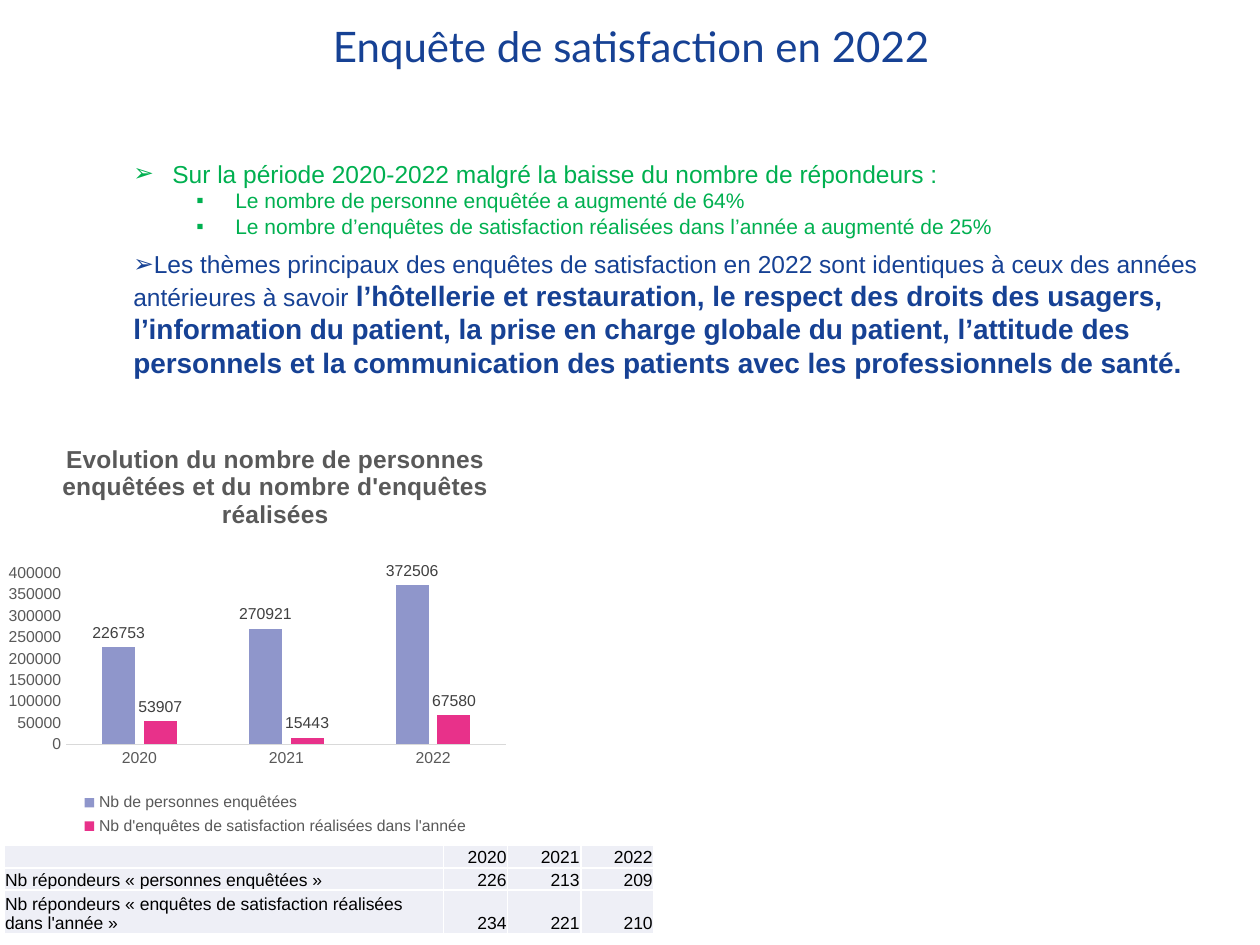
from dataclasses import dataclass

from lxml.etree import SubElement
from pptx import Presentation
from pptx.chart.data import CategoryChartData
from pptx.dml.color import RGBColor
from pptx.enum.chart import XL_CHART_TYPE, XL_LABEL_POSITION, XL_LEGEND_POSITION, XL_TICK_MARK
from pptx.enum.text import MSO_ANCHOR, MSO_AUTO_SIZE, PP_ALIGN
from pptx.oxml import parse_xml
from pptx.oxml.ns import nsdecls, qn
from pptx.util import Inches, Pt


@dataclass(frozen=True)
class Theme:
    """Colours, fonts and type sizes of the slide."""
    blue: str = "164194"
    green: str = "00B050"
    grey: str = "595959"
    label: str = "404040"
    axis: str = "D9D9D9"
    black: str = "000000"
    white: str = "FFFFFF"
    cell: str = "EEEFF6"
    series: tuple = ("8F96CB", "E8318A")
    body_font: str = "Arial"
    title_font: str = "Lato"
    title: int = 24
    strong: int = 16
    body: int = 14
    sub: int = 12
    table: int = 10
    chart: int = 9


T = Theme()
YEARS = ("2020", "2021", "2022")


def rgb(value):
    """Turn a hex string into a colour."""
    return RGBColor.from_string(value)


def style(font, size, color, bold=False, name=T.body_font):
    """Format a font."""
    font.size, font.bold, font.name = Pt(size), bold, name
    font.color.rgb = rgb(color)


def add_text(p, text, size=T.body, color=T.black, bold=False, name=T.body_font, align=None):
    """Add a formatted run to a paragraph."""
    r = p.add_run()
    r.text = text
    style(r.font, size, color, bold, name)
    if align is not None:
        p.alignment = align


def add_bullet(p, char, left):
    """Give a paragraph a hanging bullet."""
    pPr = p._p.get_or_add_pPr()
    pPr.set("marL", str(Inches(left)))
    pPr.set("indent", str(Inches(-0.31)))
    SubElement(pPr, qn("a:buFont"), typeface=T.body_font)
    SubElement(pPr, qn("a:buChar"), char=char)


def add_title(s, x, y, w, h):
    """Place the slide title."""
    tf = s.shapes.add_textbox(Inches(x), Inches(y), Inches(w), Inches(h)).text_frame
    tf.word_wrap = True
    tf.vertical_anchor = MSO_ANCHOR.MIDDLE
    add_text(tf.paragraphs[0], "Enquête de satisfaction en 2022", size=T.title,
             color=T.blue, name=T.title_font, align=PP_ALIGN.CENTER)


def add_findings(s, x, y, w, h):
    """Place the bulleted findings."""
    tf = s.shapes.add_textbox(Inches(x), Inches(y), Inches(w), Inches(h)).text_frame
    tf.word_wrap = True
    tf.auto_size = MSO_AUTO_SIZE.SHAPE_TO_FIT_TEXT
    p = tf.paragraphs[0]
    add_bullet(p, "➢", 0.31)
    add_text(p, "Sur la période 2020-2022 malgré la baisse du nombre de répondeurs :", color=T.green)
    for text in ("Le nombre de personne enquêtée a augmenté de 64%",
                 "Le nombre d’enquêtes de satisfaction réalisées dans l’année a augmenté de 25%"):
        p = tf.add_paragraph()
        p.level = 1
        add_bullet(p, "▪", 0.81)
        add_text(p, text, size=T.sub, color=T.green)
    p = tf.add_paragraph()
    p.space_before = Pt(6)
    add_bullet(p, "➢", 0)
    add_text(p, "Les thèmes principaux des enquêtes de satisfaction en 2022 sont identiques "
             "à ceux des années antérieures à savoir ", color=T.blue)
    add_text(p, "l’hôtellerie et restauration, le respect des droits des usagers, "
             "l’information du patient, la prise en charge globale du patient, l’attitude des "
             "personnels et la communication des patients avec les professionnels de santé.",
             size=T.strong, color=T.blue, bold=True)


def set_plot_layout(chart, x, y, w, h):
    """Fix the inner plot area as fractions of the chart."""
    area = chart._chartSpace.chart.plotArea
    for old in area.findall(qn("c:layout")):
        area.remove(old)
    area.insert(0, parse_xml(
        f'<c:layout {nsdecls("c")}><c:manualLayout><c:layoutTarget val="inner"/>'
        f'<c:xMode val="edge"/><c:yMode val="edge"/><c:x val="{x}"/><c:y val="{y}"/>'
        f'<c:w val="{w}"/><c:h val="{h}"/></c:manualLayout></c:layout>'))


def add_survey_chart(s, x, y, w, h):
    """Place the column chart of people surveyed and surveys done."""
    data = CategoryChartData(number_format="General")
    data.categories = YEARS
    data.add_series("Nb de personnes enquêtées", (226753, 270921, 372506))
    data.add_series("Nb d'enquêtes de satisfaction réalisées dans l'année", (53907, 15443, 67580))
    chart = s.shapes.add_chart(XL_CHART_TYPE.COLUMN_CLUSTERED, Inches(x), Inches(y),
                               Inches(w), Inches(h), data).chart
    style(chart.font, T.table, T.black)
    chart.has_title = True
    add_text(chart.chart_title.text_frame.paragraphs[0],
             "Evolution du nombre de personnes enquêtées et du nombre d'enquêtes réalisées",
             color=T.grey, bold=True)
    chart.chart_title.include_in_layout = False
    chart.has_legend = True
    chart.legend.position = XL_LEGEND_POSITION.BOTTOM
    chart.legend.include_in_layout = False
    style(chart.legend.font, T.chart, T.grey)
    for axis in (chart.category_axis, chart.value_axis):
        axis.major_tick_mark = axis.minor_tick_mark = XL_TICK_MARK.NONE
        axis.has_major_gridlines = False
        style(axis.tick_labels.font, T.chart, T.grey)
    chart.category_axis.format.line.color.rgb = rgb(T.axis)
    chart.category_axis.format.line.width = Pt(0.75)
    chart.value_axis.format.line.fill.background()
    chart.value_axis.minimum_scale, chart.value_axis.maximum_scale = 0, 400000
    chart.value_axis.major_unit = 50000
    plot = chart.plots[0]
    plot.gap_width, plot.overlap, plot.vary_by_categories = 219, -27, False
    for series, color in zip(plot.series, T.series):
        series.format.fill.solid()
        series.format.fill.fore_color.rgb = rgb(color)
        labels = series.data_labels
        labels.show_value = True
        labels.position = XL_LABEL_POSITION.OUTSIDE_END
        style(labels.font, T.chart, T.label)
    set_plot_layout(chart, 0.12, 0.36, 0.8, 0.41)


def format_cell(cell):
    """Set a cell's margins, white borders and fill."""
    cell.vertical_anchor = MSO_ANCHOR.BOTTOM
    cell.margin_left = cell.margin_right = cell.margin_top = Inches(0.01)
    cell.margin_bottom = 0
    tcPr = cell._tc.get_or_add_tcPr()
    for side in "LRTB":
        ln = SubElement(tcPr, qn(f"a:ln{side}"), w=str(Pt(1)))
        SubElement(SubElement(ln, qn("a:solidFill")), qn("a:srgbClr"), val=T.white)
    cell.fill.solid()
    cell.fill.fore_color.rgb = rgb(T.cell)


def add_respondents_table(s, x, y, w, h):
    """Place the table of respondents by year."""
    rows = (("", *YEARS),
            ("Nb répondeurs « personnes enquêtées »", "226", "213", "209"),
            ("Nb répondeurs « enquêtes de satisfaction réalisées dans l'année »",
             "234", "221", "210"))
    table = s.shapes.add_table(3, 4, Inches(x), Inches(y), Inches(w), Inches(h)).table
    for col, width in zip(table.columns, (3.49, 0.51, 0.58, 0.58)):
        col.width = Inches(width)
    for row, height, texts in zip(table.rows, (0.15, 0.15, 0.3), rows):
        row.height = Inches(height)
        for i, (cell, text) in enumerate(zip(row.cells, texts)):
            format_cell(cell)
            p = cell.text_frame.paragraphs[0]
            if text:
                add_text(p, text, size=T.table, align=PP_ALIGN.RIGHT if i else PP_ALIGN.LEFT)
            else:
                SubElement(p._p, qn("a:endParaRPr"), sz=str(T.table * 100))


def main():
    """Build and save the slide."""
    prs = Presentation()
    prs.slide_width, prs.slide_height = Inches(10), Inches(7.5)
    s = prs.slides.add_slide(prs.slide_layouts[6])
    add_title(s, 0.51, 0.13, 9, 0.46)
    add_survey_chart(s, 0, 3.36, 4.37, 3.31)
    add_respondents_table(s, 0.03, 6.71, 5.16, 0.6)
    add_findings(s, 0.96, 1.21, 8.77, 1.87)
    prs.save("out.pptx")


if __name__ == "__main__":
    main()
